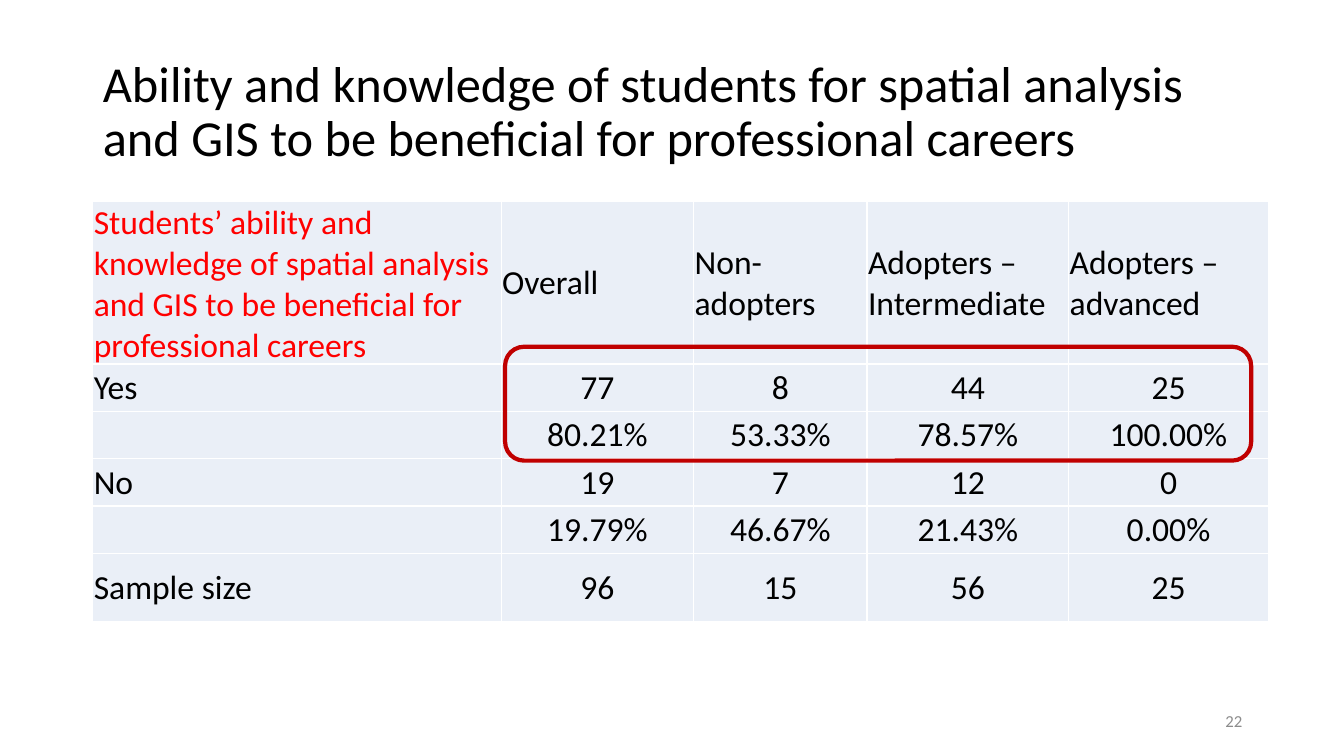
from lxml import etree
from pptx import Presentation
from pptx.dml.color import RGBColor
from pptx.enum.shapes import MSO_SHAPE as SHAPE
from pptx.enum.text import MSO_ANCHOR as ANCHOR, PP_ALIGN as ALIGN
from pptx.oxml import parse_xml
from pptx.oxml.ns import nsdecls
from pptx.util import Pt

# Content
TITLE = ("Ability and knowledge of students for spatial analysis "
         "and GIS to be beneficial for professional careers")
PAGE = "22"
ROWS = [
    ("Students’ ability and knowledge of spatial analysis and GIS "
     "to be beneficial for professional careers",
     "Overall", "Non-adopters", "Adopters – Intermediate", "Adopters – advanced"),
    ("Yes", "77", "8", "44", "25"),
    ("", "80.21%", "53.33%", "78.57%", "100.00%"),
    ("No", "19", "7", "12", "0"),
    ("", "19.79%", "46.67%", "21.43%", "0.00%"),
    ("Sample size", "96", "15", "56", "25"),
]

# Layout in px, 100 to the inch
PX = 9144
SLIDE = (1333, 750)
TITLE_BOX = (92, 40, 1150, 145)
PAGE_BOX = (942, 695, 300, 40)
TABLE_BOX = (92, 200, 1165, 417)
COL_WIDTHS = (405, 191, 172, 200, 198)
ROW_HEIGHTS = (141, 47, 47, 47, 47, 68)
HIGHLIGHT_BOX = (501, 344, 740, 113)

FONT = "Calibri"
COLORS = {"text": "000000", "question": "FF0000", "page": "8C8C8C",
          "cell": "EAEFF7", "border": "FFFFFF", "highlight": "C00000"}


def rgb(name):
    return RGBColor.from_string(COLORS[name])


def emu(box):
    return [v * PX for v in box]


def write(tf, text, size, color, align=ALIGN.LEFT):
    tf.text = text
    tf.word_wrap = True
    tf.vertical_anchor = ANCHOR.MIDDLE
    p = tf.paragraphs[0]
    p.alignment = align
    for r in p.runs:
        r.font.name = FONT
        r.font.size = Pt(size)
        r.font.bold = False
        r.font.color.rgb = rgb(color)
    return p


def set_borders(cell):
    tc_pr = cell._tc.get_or_add_tcPr()
    for i, side in enumerate(("lnL", "lnR", "lnT", "lnB")):
        ln = parse_xml(f'<a:{side} {nsdecls("a")} w="{Pt(1)}"/>')
        fill = etree.SubElement(ln, ln.tag.replace(side, "solidFill"))
        etree.SubElement(fill, ln.tag.replace(side, "srgbClr"), val=COLORS["border"])
        tc_pr.insert(i, ln)


prs = Presentation()
prs.slide_width, prs.slide_height = emu(SLIDE)
slide = prs.slides.add_slide(prs.slide_layouts[5])

# Title
title = slide.shapes.title
title.left, title.top, title.width, title.height = emu(TITLE_BOX)
p = write(title.text_frame, TITLE, 36, "text")
p.line_spacing = 0.9

# Page number
page = slide.shapes.add_textbox(*emu(PAGE_BOX))
write(page.text_frame, PAGE, 12, "page", ALIGN.RIGHT)

# Table
table = slide.shapes.add_table(len(ROWS), len(COL_WIDTHS), *emu(TABLE_BOX)).table
table.first_row = table.horz_banding = False
for col, width in zip(table.columns, COL_WIDTHS):
    col.width = width * PX
for row, height in zip(table.rows, ROW_HEIGHTS):
    row.height = height * PX

for i, row in enumerate(ROWS):
    for j, text in enumerate(row):
        cell = table.cell(i, j)
        cell.margin_left = cell.margin_right = cell.margin_top = PX
        cell.margin_bottom = 0
        cell.vertical_anchor = ANCHOR.MIDDLE
        cell.fill.solid()
        cell.fill.fore_color.rgb = rgb("cell")
        set_borders(cell)
        if text:
            color = "question" if i == j == 0 else "text"
            align = ALIGN.CENTER if i and j else ALIGN.LEFT
            write(cell.text_frame, text, 24, color, align)

# Highlight around the "Yes" figures
sp = slide.shapes.add_shape(SHAPE.ROUNDED_RECTANGLE, *emu(HIGHLIGHT_BOX))
sp.shadow.inherit = False
sp.fill.background()
sp.line.color.rgb = rgb("highlight")
sp.line.width = Pt(3)

prs.save("out.pptx")
